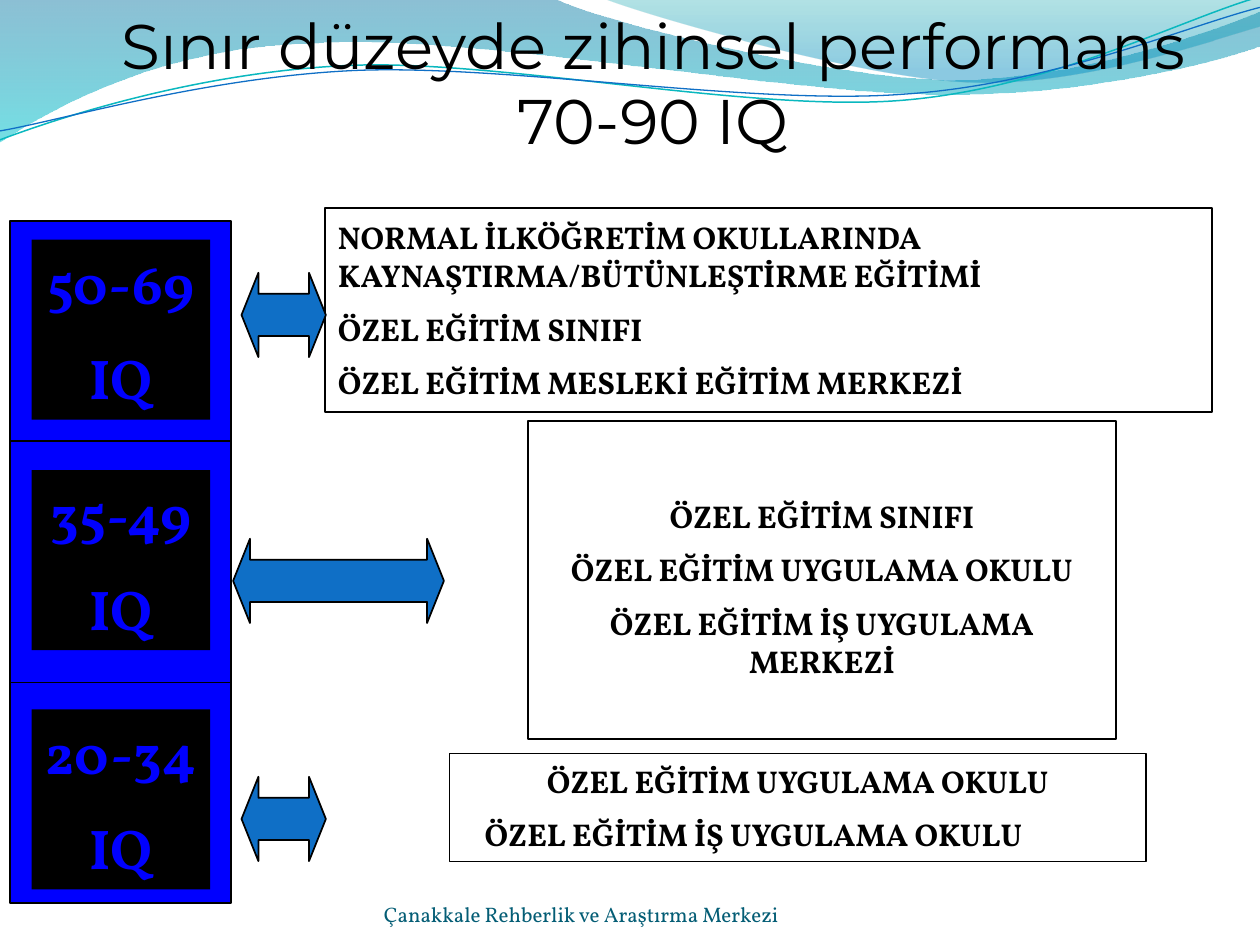
from lxml import etree
from pptx import Presentation
from pptx.dml.color import RGBColor
from pptx.enum.shapes import MSO_CONNECTOR, MSO_SHAPE
from pptx.enum.text import MSO_ANCHOR, MSO_AUTO_SIZE, PP_ALIGN
from pptx.oxml.ns import qn
from pptx.util import Cm, Pt

RECT = MSO_SHAPE.RECTANGLE
PROCESS = MSO_SHAPE.FLOWCHART_PROCESS
ARROW = MSO_SHAPE.LEFT_RIGHT_ARROW
LEFT, CENTER = PP_ALIGN.LEFT, PP_ALIGN.CENTER
TOP, MIDDLE, BOTTOM = MSO_ANCHOR.TOP, MSO_ANCHOR.MIDDLE, MSO_ANCHOR.BOTTOM

COLORS = {
    "black": "000000", "blue": "0000FF", "arrow": "0F6FC6", "footer": "045D75",
    "teal_line": "0AB8BF", "blue_line": "0F6FC6",
    "deep": "0074A1", "aqua": "00C6CF", "teal": "00A1A9", "sea": "008BBF",
}
HEADING_FONT, BODY_FONT = "Montserrat", "Vollkorn"

# Each path is a start point, then segments: one point is a straight line,
# three points are a Bezier curve. All lengths are centimetres.
LEFT_WAVE = ((0, 0), [
    [(11.18, -0.03)],
    [(12.09, 0.43), (16.87, 1.6), (19.25, 1.6)],
    [(21.67, 1.6), (24.33, 0.66), (25.4, 0.23)],
    [(25.43, 0.91)],
    [(24.97, 1.12), (22.1, 1.93), (18.95, 1.9)],
    [(15.8, 1.9), (9.7, 0.71), (6.53, 0.86)],
    [(3.28, 0.91), (1.17, 2.11), (-0.03, 2.87)],
    [(0, 0)],
])
RIGHT_WAVE = ((12.17, -0.03), [
    [(12.93, 0.28), (17.32, 1.57), (19.53, 1.65)],
    [(21.74, 1.75), (24.41, 0.81), (25.4, 0.53)],
    [(25.4, 0)],
    [(12.17, -0.03)],
])
TEAL_CURVE = ((0, 2.82), [
    [(1.22, 2.36), (4.01, 1.45), (7.04, 1.32)],
    [(10.03, 1.19), (15.06, 2.26), (18.11, 2.03)],
    [(21.16, 1.8), (23.83, 0.38), (25.35, -0.05)],
])
BLUE_CURVE = ((0, 2.64), [
    [(1.19, 2.44), (4.17, 1.55), (7.19, 1.42)],
    [(10.24, 1.3), (15.16, 2.13), (18.21, 1.9)],
    [(21.23, 1.7), (23.9, 0.53), (25.4, 0.15)],
])

# IQ range, top of its label, arrow (left, top, width), school box, schools, alignment
LEVELS = [
    ("50-69", 4.83, (4.87, 5.5, 1.7), (6.56, 4.19, 17.88, 4.11),
     ["NORMAL İLKÖĞRETİM OKULLARINDA KAYNAŞTIRMA/BÜTÜNLEŞTİRME EĞİTİMİ",
      "ÖZEL EĞİTİM SINIFI",
      "ÖZEL EĞİTİM MESLEKİ EĞİTİM MERKEZİ"], LEFT),
    ("35-49", 9.48, (4.7, 10.86, 4.25), (10.64, 8.49, 11.86, 6.41),
     ["ÖZEL EĞİTİM SINIFI",
      "ÖZEL EĞİTİM UYGULAMA OKULU",
      "ÖZEL EĞİTİM İŞ UYGULAMA MERKEZİ"], CENTER),
    ("20-34", 14.3, (4.87, 15.66, 1.7), (9.06, 15.19, 14.05, 2.18),
     ["ÖZEL EĞİTİM UYGULAMA OKULU",
      "ÖZEL EĞİTİM İŞ UYGULAMA OKULU"], CENTER),
]


def rgb(name):
    return RGBColor.from_string(COLORS[name])


def bend_segments(outline, segments):
    """Join the lines of each three-point segment into one Bezier curve."""
    lines = iter(list(outline._element.iter(qn("a:lnTo"))))
    for segment in segments:
        first, *others = [next(lines) for _ in segment]
        if others:
            first.tag = qn("a:cubicBezTo")
        for line in others:
            first.append(line[0])
            line.getparent().remove(line)


def add_outline(slide, path, closed):
    """Draw a path and move it to the layout, behind the slide's content."""
    start, segments = path
    builder = slide.shapes.build_freeform(*map(Cm, start), scale=1.0)
    points = [(Cm(x), Cm(y)) for segment in segments for x, y in segment]
    builder.add_line_segments(points, close=closed)
    outline = builder.convert_to_shape()
    bend_segments(outline, segments)
    outline.shadow.inherit = False
    slide.slide_layout.shapes._spTree.append(outline._element)
    return outline


def add_wave(slide, path, stops):
    """Add a filled wave; stops are (position, colour, opacity in percent)."""
    wave = add_outline(slide, path, True)
    wave.line.fill.background()
    wave.fill.gradient()
    wave.fill.gradient_angle = 270
    for stop, (position, color, _) in zip(wave.fill.gradient_stops, stops):
        stop.position = position
        stop.color.rgb = rgb(color)
    gradient = next(wave._element.iter(qn("a:gradFill")))
    for value, (_, _, opacity) in zip(gradient.iter(qn("a:srgbClr")), stops):
        etree.SubElement(value, qn("a:alpha"), val=str(opacity * 1000))


def add_curve(slide, path, color, width):
    curve = add_outline(slide, path, False)
    curve.fill.background()
    curve.line.color.rgb = rgb(color)
    curve.line.width = Pt(width)


def set_text(shape, lines, size, font=BODY_FONT, color="black", bold=False,
             align=LEFT, anchor=MIDDLE, before=0, wrap=True):
    frame = shape.text_frame
    frame.word_wrap = wrap
    frame.auto_size = MSO_AUTO_SIZE.NONE
    frame.vertical_anchor = anchor
    frame.text = "\n".join(lines)
    for paragraph in frame.paragraphs:
        paragraph.alignment = align
        paragraph.space_before = Pt(before)
        style = paragraph.font
        style.name, style.size, style.bold = font, Pt(size), bold
        style.color.rgb = rgb(color)


def add_block(slide, kind, box, fill=None, outlined=True):
    block = slide.shapes.add_shape(kind, *map(Cm, box))
    block.shadow.inherit = False
    if fill:
        block.fill.solid()
        block.fill.fore_color.rgb = rgb(fill)
    else:
        block.fill.background()
    if outlined:
        block.line.color.rgb = rgb("black")
        block.line.width = Pt(1)
    else:
        block.line.fill.background()
    return block


def add_divider(slide, left, right, y):
    divider = slide.shapes.add_connector(
        MSO_CONNECTOR.STRAIGHT, Cm(left), Cm(y), Cm(right), Cm(y))
    divider.line.color.rgb = rgb("black")
    divider.line.width = Pt(1)
    etree.SubElement(divider._element.spPr, qn("a:effectLst"))


def add_level(slide, iq_range, label_top, arrow_place, school_box, schools, align):
    """Add a label, its arrow and its school box; return the school box."""
    label = add_block(slide, RECT, (0.64, label_top, 3.6, 3.63), "black", outlined=False)
    set_text(label, [iq_range, "IQ"], 32, color="blue", bold=True, align=CENTER, before=16)
    school = add_block(slide, RECT, school_box)
    set_text(school, schools, 18, bold=True, align=align, before=9)
    arrow = add_block(slide, ARROW, (*arrow_place, 1.7), "arrow")
    arrow.adjustments[0], arrow.adjustments[1] = 0.5, 0.2
    return school


def indent_last_line(shape, indent):
    last = shape.text_frame.paragraphs[-1]
    last.alignment = LEFT
    last._p.get_or_add_pPr().set("marL", str(Cm(indent)))


def add_title(slide, lines):
    title = slide.shapes.title
    title.left, title.top, title.width, title.height = map(Cm, (1.5, 0, 23.34, 3.61))
    set_text(title, lines, 36, font=HEADING_FONT, align=CENTER, anchor=TOP, wrap=False)


def add_footer(slide, text):
    footer = slide.shapes.add_textbox(*map(Cm, (7.74, 17.66, 12.85, 1.02)))
    set_text(footer, [text], 12, color="footer", anchor=BOTTOM)
    frame = footer.text_frame
    frame.margin_left = frame.margin_right = frame.margin_top = frame.margin_bottom = 0


def main():
    deck = Presentation()
    deck.slide_width, deck.slide_height = Cm(25.4), Cm(19.05)
    slide = deck.slides.add_slide(deck.slide_layouts[5])

    add_wave(slide, LEFT_WAVE, [(0, "deep", 45), (1, "aqua", 55)])
    add_wave(slide, RIGHT_WAVE, [(0, "teal", 30), (0.8, "sea", 45)])
    add_curve(slide, TEAL_CURVE, "teal_line", 0.85)
    add_curve(slide, BLUE_CURVE, "blue_line", 0.75)

    add_title(slide, ["Sınır düzeyde zihinsel performans", "70-90 IQ"])
    add_block(slide, PROCESS, (0.21, 4.45, 4.45, 13.76), "blue")
    for y in (8.89, 13.76):
        add_divider(slide, 0.21, 4.66, y)
    _, middle_school, last_school = [add_level(slide, *level) for level in LEVELS]
    middle_school.text_frame.margin_top = Cm(0.45)
    indent_last_line(last_school, 0.46)
    add_footer(slide, "Çanakkale Rehberlik ve Araştırma Merkezi")
    deck.save("out.pptx")


if __name__ == "__main__":
    main()
